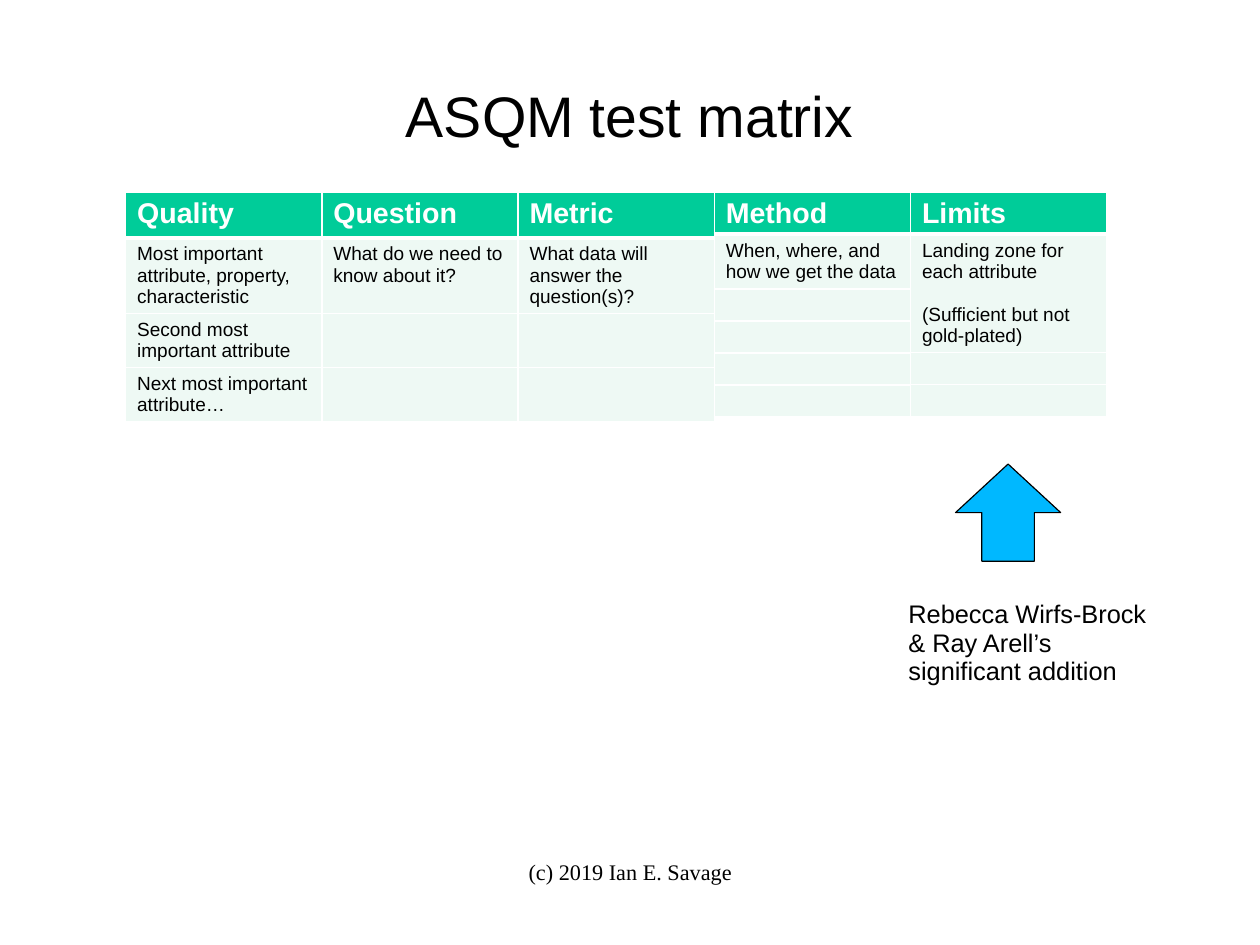
from lxml.etree import SubElement
from pptx import Presentation
from pptx.dml.color import RGBColor
from pptx.enum.shapes import MSO_SHAPE
from pptx.enum.text import MSO_ANCHOR, PP_ALIGN
from pptx.oxml.ns import qn
from pptx.util import Inches, Pt

BLACK = RGBColor(0x00, 0x00, 0x00)
WHITE = RGBColor(0xFF, 0xFF, 0xFF)
GREEN = RGBColor(0x00, 0xCC, 0x99)
MINT = RGBColor(0xEE, 0xF9, 0xF4)
BLUE = RGBColor(0x00, 0xB8, 0xFF)

COL = 5.15 / 3
TABLES = [
    ([0.4, 0.66, 0.47, 0.47], 4, [
        ["Quality", "Question", "Metric"],
        ["Most important attribute, property, characteristic",
         "What do we need to know about it?",
         "What data will answer the question(s)?"],
        ["Second most important attribute", "", ""],
        ["Next most important attribute…", "", ""]]),
    ([0.37, 0.48] + [0.28] * 5, 6, [
        ["Method"], ["When, where, and how we get the data"]] + [[""]] * 5),
    ([0.37, 1.03] + [0.28] * 5, 4, [
        ["Limits"],
        ["Landing zone for each attribute\n(Sufficient but not gold-plated)"]] + [[""]] * 5),
]


def style(frame, size, color=BLACK, font="Arial", bold=False, align=PP_ALIGN.LEFT, space=0.93):
    """Format every paragraph and run of a text frame."""
    for para in frame.paragraphs:
        para.alignment = align
        para.line_spacing = space
        for run in para.runs:
            run.font.size = Pt(size)
            run.font.name = font
            run.font.bold = bold
            run.font.color.rgb = color


def edge(cell, head):
    """Draw white borders on a cell, with a thick one under a header."""
    props = cell._tc.get_or_add_tcPr()
    for side in "LRTB":
        width = Pt(3 if head and side == "B" else 1)
        line = SubElement(props, qn(f"a:ln{side}"), w=str(width))
        fill = SubElement(line, qn("a:solidFill"))
        SubElement(fill, qn("a:srgbClr"), val=str(WHITE))


def fill_cell(cell, text, head, shaded):
    """Write and colour one table cell."""
    size = 18 if head else 12
    cell.text = text
    style(cell.text_frame, size, WHITE if head else BLACK, bold=head, space=1.0)
    for para in cell.text_frame.paragraphs[1:]:
        para.space_before = Pt(13.5)
    if head or not text:
        cell.margin_bottom = Inches(0.02)
    if not text:
        para = cell.text_frame.paragraphs[0]
        SubElement(para._p, qn("a:endParaRPr"), sz=str(size * 100))
    edge(cell, head)
    if shaded:
        cell.fill.solid()
        cell.fill.fore_color.rgb = GREEN if head else MINT
    else:
        cell.fill.background()


def add_grid(slide, left, top, heights, shaded, rows):
    """Add one table and return its right edge."""
    count = len(rows[0])
    width = COL * count
    grid = slide.shapes.add_table(len(rows), count, Inches(left), Inches(top),
                                  Inches(width), Inches(sum(heights))).table
    grid.first_row = grid.horz_banding = False
    for col in grid.columns:
        col.width = Inches(COL)
    for i, (height, row) in enumerate(zip(heights, rows)):
        grid.rows[i].height = Inches(height)
        for j, text in enumerate(row):
            fill_cell(grid.cell(i, j), text, i == 0, i < shaded)
    return left + width


def add_matrix(slide, left, top):
    """Set the tables side by side."""
    for heights, shaded, rows in TABLES:
        left = add_grid(slide, left, top, heights, shaded, rows)


def add_title(slide, left, top, width, height):
    """Place the slide title."""
    title = slide.shapes.title
    title.left, title.top = Inches(left), Inches(top)
    title.width, title.height = Inches(width), Inches(height)
    frame = title.text_frame
    frame.text = "ASQM test matrix"
    frame.vertical_anchor = MSO_ANCHOR.MIDDLE
    frame.margin_left = frame.margin_right = frame.margin_bottom = 0
    frame.margin_top = Inches(0.03)
    style(frame, 36, align=PP_ALIGN.CENTER)


def add_text(slide, left, top, width, height, text):
    """Add a wrapping text box and return its frame."""
    box = slide.shapes.add_textbox(Inches(left), Inches(top), Inches(width), Inches(height))
    frame = box.text_frame
    frame.word_wrap = True
    frame.text = text
    return frame


def add_note(slide, left, top, width, height):
    """Add the arrow and the credit below it."""
    arrow = slide.shapes.add_shape(MSO_SHAPE.UP_ARROW, Inches(left + 0.51), Inches(top),
                                   Inches(0.92), Inches(0.85))
    arrow.shadow.inherit = False
    arrow.fill.solid()
    arrow.fill.fore_color.rgb = BLUE
    arrow.line.color.rgb = BLACK
    arrow.line.width = Pt(0.75)
    frame = add_text(slide, left, top + 1.15, width, height - 1.15,
                     "Rebecca Wirfs-Brock\n& Ray Arell’s significant addition")
    style(frame, 16)


def add_footer(slide, left, top, width, height):
    """Add the centred copyright line."""
    frame = add_text(slide, left, top, width, height, "(c) 2019 Ian E. Savage")
    frame.margin_left = frame.margin_right = frame.margin_top = frame.margin_bottom = 0
    style(frame, 14, font="Times New Roman", align=PP_ALIGN.CENTER, space=0.95)


def main():
    """Build and save the slide."""
    deck = Presentation()
    deck.slide_width, deck.slide_height = Inches(28 / 2.54), Inches(21 / 2.54)
    slide = deck.slides.add_slide(deck.slide_layouts[5])
    add_title(slide, 0.55, 0.33, 9.92, 1.38)
    add_matrix(slide, 1.1, 1.68)
    add_note(slide, 7.85, 4.06, 2.33, 2)
    add_footer(slide, 3.77, 7.53, 3.49, 0.57)
    deck.save("out.pptx")


if __name__ == "__main__":
    main()
